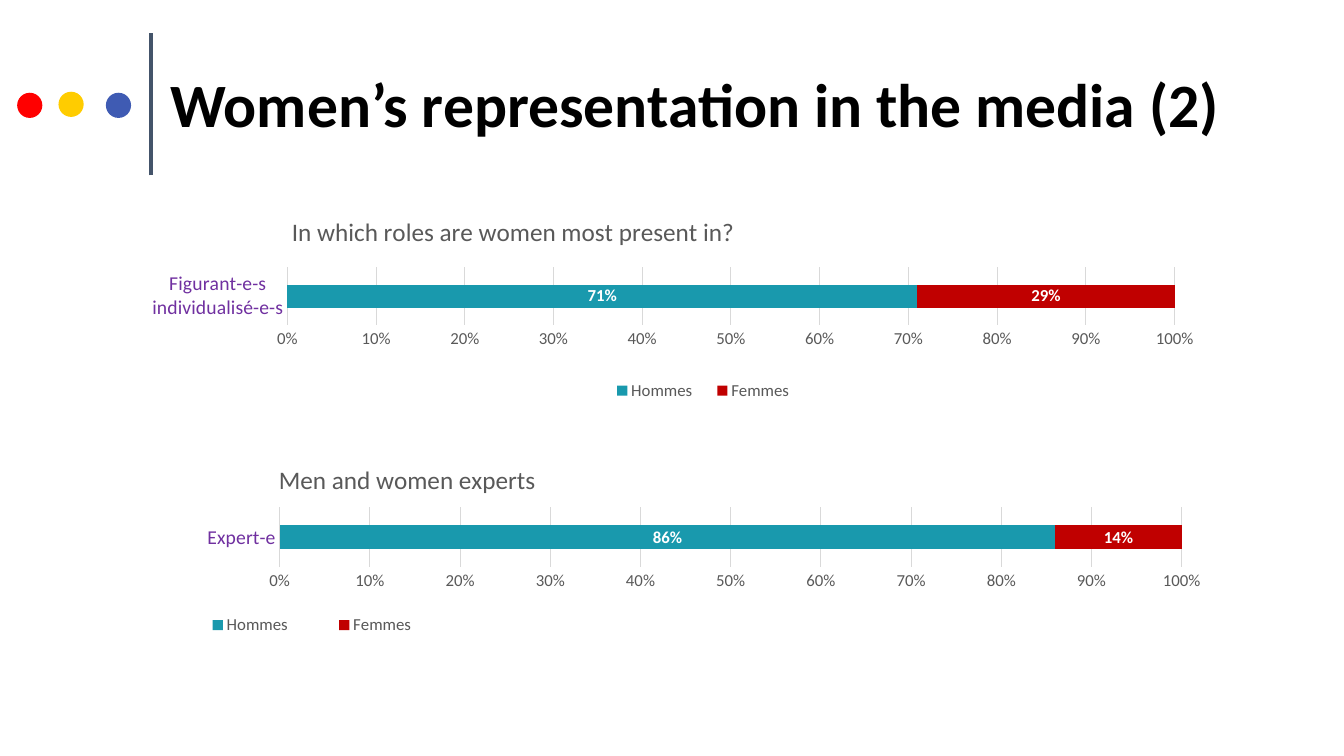
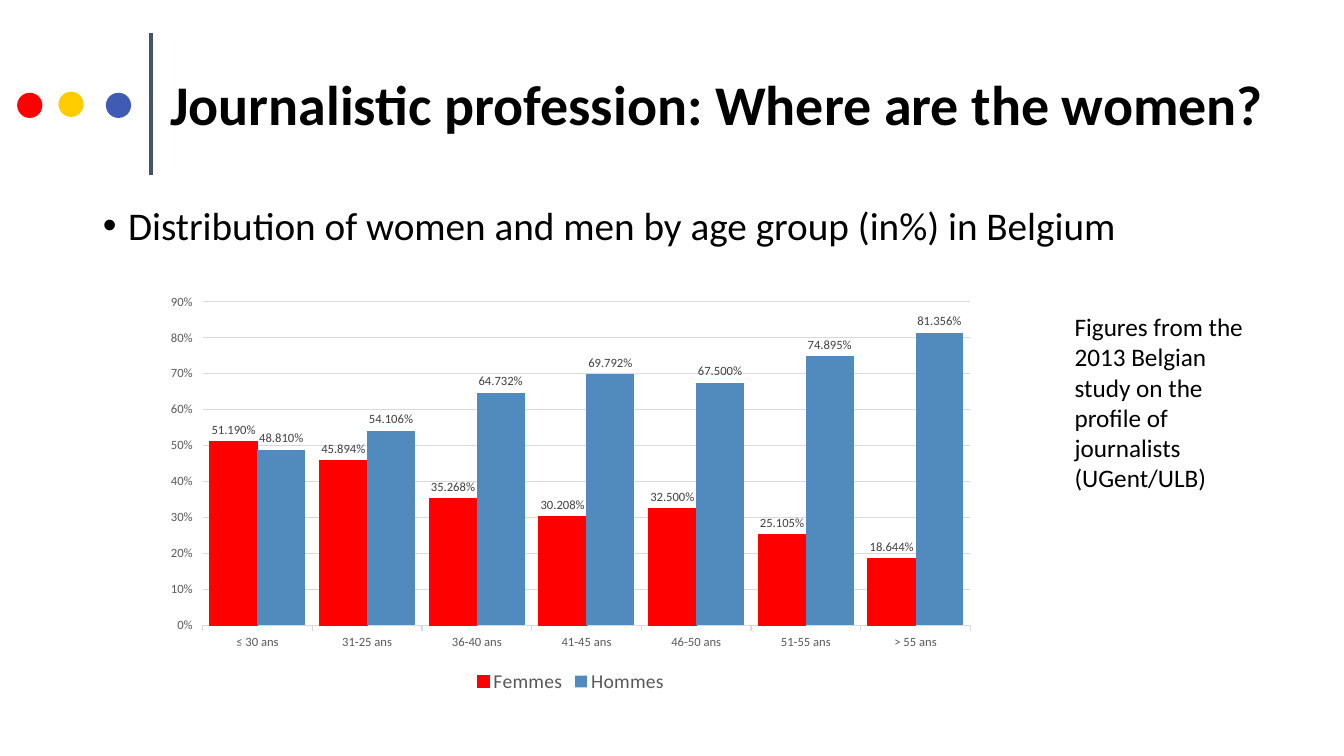
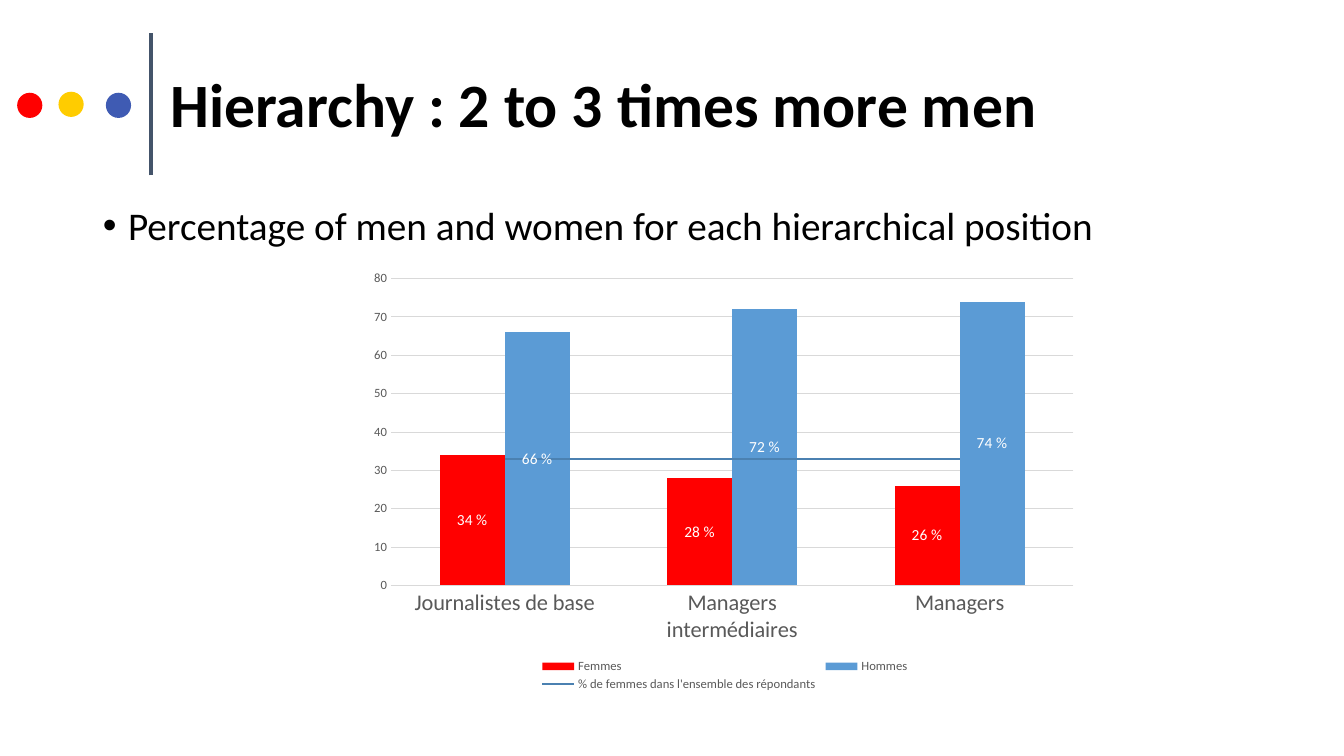
from dataclasses import dataclass

from lxml.etree import SubElement
from pptx import Presentation
from pptx.chart.data import CategoryChartData
from pptx.dml.color import RGBColor
from pptx.enum.chart import XL_CHART_TYPE, XL_LABEL_POSITION, XL_LEGEND_POSITION, XL_MARKER_STYLE, XL_TICK_MARK
from pptx.enum.shapes import MSO_CONNECTOR, MSO_SHAPE
from pptx.enum.text import MSO_ANCHOR, MSO_AUTO_SIZE, PP_ALIGN
from pptx.oxml import parse_xml
from pptx.oxml.ns import nsdecls, qn
from pptx.util import Emu, Pt


@dataclass(frozen=True)
class Theme:
    """Colours and type sizes of the deck."""
    font: str = "Calibri"
    black: str = "000000"
    white: str = "FFFFFF"
    grey: str = "595959"
    dark_grey: str = "404040"
    grid: str = "D9D9D9"
    rule: str = "44546A"
    red: str = "FF0000"
    yellow: str = "FFCC00"
    blue: str = "3F5BB3"
    purple: str = "7030A0"
    teal: str = "1999AD"
    crimson: str = "C00000"
    steel: str = "518ABD"
    sky: str = "5B9BD5"
    average: str = "4B81B1"
    title: int = 44
    long_title: int = 40
    body: int = 28
    note: int = 18
    chart_title: int = 18
    big_label: int = 16
    label: int = 14
    small: int = 12
    point: int = 11
    chart: int = 10
    tiny: int = 9


T = Theme()


def px(n):
    """Turn px into EMU, 100 px to the inch."""
    return Emu(n * 9144)


def rgb(color):
    """Turn a hex string into a colour."""
    return RGBColor.from_string(color)


def style_font(font, size, color=T.black, bold=False):
    """Set typeface, size, colour and weight."""
    font.name, font.size, font.bold = T.font, Pt(size), bold
    font.color.rgb = rgb(color)


def style_line(line, color, width=0.75):
    """Set the colour and width of a line."""
    line.color.rgb = rgb(color)
    line.width = Pt(width)


def write(tf, *lines, size, color=T.black, bold=False, spacing=None, bullet=False,
          anchor=MSO_ANCHOR.TOP, fit=MSO_AUTO_SIZE.NONE):
    """Fill a text frame with one paragraph per line."""
    tf.word_wrap, tf.auto_size, tf.vertical_anchor = True, fit, anchor
    for i, line in enumerate(lines):
        p = tf.add_paragraph() if i else tf.paragraphs[0]
        p.alignment, p.space_before, p.line_spacing = PP_ALIGN.LEFT, Pt(0), spacing
        if bullet:
            pPr = p._p.get_or_add_pPr()
            pPr.set("marL", str(px(25)))
            pPr.set("indent", str(px(-25)))
            SubElement(pPr, qn("a:buFont")).set("typeface", "Arial")
            SubElement(pPr, qn("a:buChar")).set("char", "•")
        r = p.add_run()
        r.text = line
        style_font(r.font, size, color, bold)


def place(s, left, top, width, height):
    """Move and size a shape."""
    s.left, s.top, s.width, s.height = map(px, (left, top, width, height))


def add_slide(prs, title, size=T.title, width=1083, body=None):
    """Add a slide with its title and optional bullet."""
    slide = prs.slides.add_slide(prs.slide_layouts[1 if body else 5])
    place(slide.shapes.title, 159, 34, width, 145)
    write(slide.shapes.title.text_frame, title, size=size, bold=True, spacing=0.9,
          anchor=MSO_ANCHOR.MIDDLE)
    if body:
        s = slide.placeholders[1]
        place(s, 92, 200, 1150, 476)
        write(s.text_frame, body, size=T.body, spacing=0.9, bullet=True)
    return slide


def decorate_master(prs, slide):
    """Draw the dots and the rule, then hand them to the master."""
    marks = []
    for left, top, color in ((17, 92, T.red), (58, 91, T.yellow), (105, 92, T.blue)):
        s = slide.shapes.add_shape(MSO_SHAPE.OVAL, px(left), px(top), px(25), px(25))
        s.shadow.inherit = False
        s.fill.solid()
        s.fill.fore_color.rgb = rgb(color)
        s.line.fill.background()
        marks.append(s)
    rule = slide.shapes.add_connector(MSO_CONNECTOR.STRAIGHT, px(150), px(174), px(150), px(33))
    style_line(rule.line, T.rule, 3)
    SubElement(rule.element.spPr, qn("a:effectLst"))
    for i, s in enumerate(marks + [rule]):
        s.element.xpath(".//p:cNvPr")[0].set("id", str(100 + i))
        prs.slide_master.shapes.element.append(s.element)


def set_layout(parent, x, y, w=None, h=None, inner=False):
    """Give a chart part a manual layout in fractions of the chart."""
    fields = [("layoutTarget", "inner")] if inner else []
    fields += [("xMode", "edge"), ("yMode", "edge"), ("x", x), ("y", y)]
    if w:
        fields += [("w", w), ("h", h)]
    rows = "".join(f'<c:{tag} val="{val}"/>' for tag, val in fields)
    layout = parse_xml(f'<c:layout {nsdecls("c")}><c:manualLayout>{rows}</c:manualLayout></c:layout>')
    for old in parent.findall(qn("c:layout")):
        parent.remove(old)
    overlay = parent.find(qn("c:overlay"))
    if overlay is None:
        parent.insert(0, layout)
    else:
        overlay.addprevious(layout)


def add_chart(slide, kind, box, cats, series, gap, cat_size, val_size, legend_size,
              cat_color=T.grey, tick=XL_TICK_MARK.NONE, axis_format="General",
              plot_layout=None, legend_layout=None):
    """Add a styled bar or column chart; series holds (name, values, colour)."""
    data = CategoryChartData()
    data.categories = cats
    for name, vals, _ in series:
        data.add_series(name, vals)
    chart = slide.shapes.add_chart(kind, *map(px, box), data).chart
    chart.has_title = False
    style_font(chart.font, T.chart)
    plot = chart.plots[0]
    plot.vary_by_categories, plot.gap_width = False, gap
    plot.overlap = 100 if kind == XL_CHART_TYPE.BAR_STACKED_100 else 0
    for ser, (_, _, color) in zip(plot.series, series):
        ser.format.fill.solid()
        ser.format.fill.fore_color.rgb = rgb(color)
        ser.invert_if_negative = False
    for axis, size, color in ((chart.category_axis, cat_size, cat_color),
                              (chart.value_axis, val_size, T.grey)):
        axis.major_tick_mark, axis.minor_tick_mark = tick, XL_TICK_MARK.NONE
        style_font(axis.tick_labels.font, size, color)
    style_line(chart.category_axis.format.line, T.grid)
    axis = chart.value_axis
    axis.minimum_scale = 0
    axis.format.line.fill.background()
    style_line(axis.major_gridlines.format.line, T.grid)
    axis.tick_labels.number_format = axis_format
    axis.tick_labels.number_format_is_linked = False
    chart.has_legend = True
    chart.legend.position = XL_LEGEND_POSITION.BOTTOM
    chart.legend.include_in_layout = False
    style_font(chart.legend.font, legend_size, T.grey)
    if plot_layout:
        set_layout(chart.element.xpath("c:chart/c:plotArea")[0], *plot_layout, inner=True)
    if legend_layout:
        set_layout(chart.element.xpath("c:chart/c:legend")[0], *legend_layout)
    return chart


def add_labels(chart, number_format, size, color, bold=False, position=None):
    """Show the values of every bar series."""
    for ser in chart.plots[0].series:
        labels = ser.data_labels
        labels.show_value = True
        labels.number_format, labels.number_format_is_linked = number_format, False
        style_font(labels.font, size, color, bold)
        if position is not None:
            labels.position = position


def add_share_chart(slide, title, category, men, box, title_at, plot_layout, legend_layout):
    """Add a single bar split between men and women."""
    series = [("Hommes", [men], T.teal), ("Femmes", [round(1 - men, 2)], T.crimson)]
    chart = add_chart(slide, XL_CHART_TYPE.BAR_STACKED_100, box, [category], series, gap=150,
                      cat_size=T.label, val_size=T.small, legend_size=T.small,
                      cat_color=T.purple, axis_format="0%",
                      plot_layout=plot_layout, legend_layout=legend_layout)
    add_labels(chart, "0%", T.small, T.white, bold=True)
    chart.has_title = True
    write(chart.chart_title.text_frame, title, size=T.chart_title, color=T.grey)
    set_layout(chart.element.xpath("c:chart/c:title")[0], *title_at)


def last_series_as_line(chart, color):
    """Turn the last column series into a line on the same axes."""
    bar = chart.element.xpath(".//c:barChart")[0]
    ser = bar.findall(qn("c:ser"))[-1]
    for tag in ser.findall(qn("c:invertIfNegative")):
        ser.remove(tag)
    line = parse_xml(f'<c:lineChart {nsdecls("c")}><c:grouping val="stacked"/>'
                     '<c:varyColors val="0"/><c:marker val="1"/></c:lineChart>')
    line.insert(2, ser)
    for ax in bar.findall(qn("c:axId")):
        SubElement(line, qn("c:axId")).set("val", ax.get("val"))
    bar.addnext(line)
    s = chart.plots[1].series[0]
    s.smooth = False
    s.marker.style = XL_MARKER_STYLE.NONE
    s.format.fill.background()
    style_line(s.format.line, color, 1.5)


def roles_slide(prs):
    """Build the slide on roles and experts."""
    slide = add_slide(prs, "Women’s representation in the media (2)")
    decorate_master(prs, slide)
    add_share_chart(slide, "In which roles are women most present in?",
                    "Figurant-e-s individualisé-e-s", 0.71, (120, 202, 1100, 204),
                    (0.15, 0.03), (0.15, 0.31, 0.8, 0.28), (0.43, 0.84, 0.19, 0.14))
    add_share_chart(slide, "Men and women experts", "Expert-e", 0.86, (155, 444, 1065, 198),
                    (0.11, 0.05), (0.115, 0.3, 0.84, 0.3), (0.01, 0.82, 0.27, 0.14))


def age_slide(prs):
    """Build the slide on age groups."""
    slide = add_slide(prs, "Journalistic profession: Where are the women?", T.long_title, 1134,
                      "Distribution of women and men by age group (in%) in Belgium")
    women = [0.5119, 0.45894, 0.35268, 0.30208, 0.325, 0.25105, 0.18644]
    men = [round(1 - share, 5) for share in women]
    cats = ["≤ 30 ans", "31-25 ans", "36-40 ans", "41-45 ans", "46-50 ans", "51-55 ans", "> 55 ans"]
    chart = add_chart(slide, XL_CHART_TYPE.COLUMN_CLUSTERED, (153, 284, 826, 408), cats,
                      [("Femmes", women, T.red), ("Hommes", men, T.steel)], gap=30,
                      cat_size=T.tiny, val_size=T.tiny, legend_size=T.label,
                      tick=XL_TICK_MARK.OUTSIDE, axis_format="0%")
    style_line(chart.plots[0].series[0].format.line, T.red)
    add_labels(chart, "#.#00%", T.tiny, T.dark_grey, position=XL_LABEL_POSITION.OUTSIDE_END)
    note = slide.shapes.add_textbox(px(1056), px(304), px(206), px(192))
    write(note.text_frame, "Figures from the 2013 Belgian study on the profile of journalists",
          "(UGent/ULB)", size=T.note, fit=MSO_AUTO_SIZE.SHAPE_TO_FIT_TEXT)


def hierarchy_slide(prs):
    """Build the slide on hierarchical positions."""
    slide = add_slide(prs, "Hierarchy : 2 to 3 times more men",
                      body="Percentage of men and women for each hierarchical position")
    series = [("Femmes", [34, 28, 26], T.red), ("Hommes", [66, 72, 74], T.sky),
              ("% de femmes dans l'ensemble des répondants", [33] * 3, T.average)]
    chart = add_chart(slide, XL_CHART_TYPE.COLUMN_CLUSTERED, (359, 259, 720, 435),
                      ["Journalistes de base", "Managers intermédiaires", "Managers"], series,
                      gap=150, cat_size=T.big_label, val_size=T.tiny, legend_size=T.tiny,
                      plot_layout=(0.04, 0.04, 0.94, 0.7), legend_layout=(0.24, 0.9, 0.52, 0.09))
    last_series_as_line(chart, T.average)
    add_labels(chart, '0" %"', T.point, T.white, position=XL_LABEL_POSITION.CENTER)


def main():
    """Build and save the deck."""
    prs = Presentation()
    prs.slide_width, prs.slide_height = px(1333), px(750)
    roles_slide(prs)
    age_slide(prs)
    hierarchy_slide(prs)
    prs.save("out.pptx")


if __name__ == "__main__":
    main()
